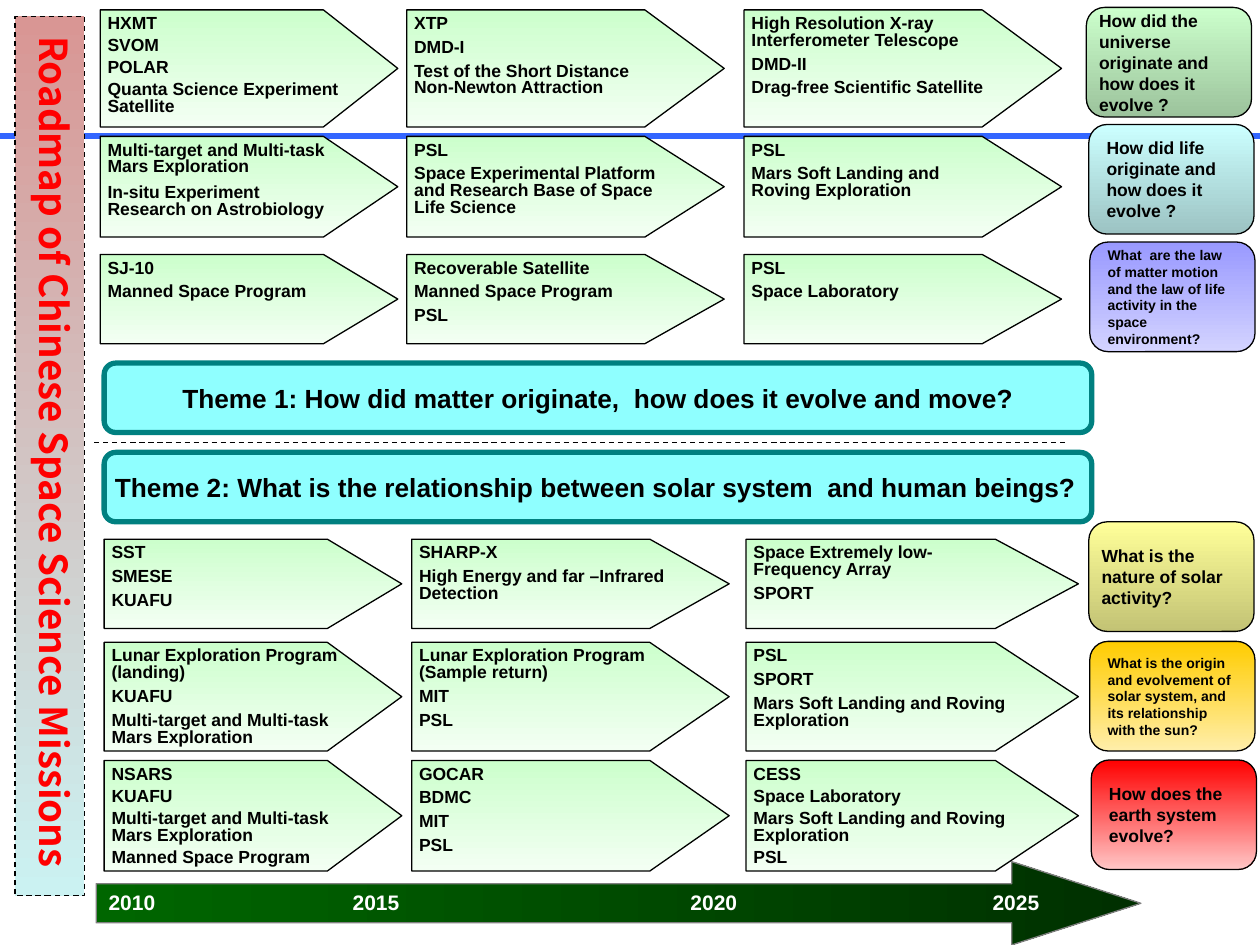
"""Build the roadmap slide of Chinese space science missions."""
from dataclasses import dataclass

from lxml.etree import SubElement
from pptx import Presentation
from pptx.dml.color import RGBColor
from pptx.enum.dml import MSO_LINE
from pptx.enum.shapes import MSO_CONNECTOR, MSO_SHAPE
from pptx.enum.text import MSO_ANCHOR, MSO_AUTO_SIZE, PP_ALIGN
from pptx.oxml.ns import qn
from pptx.util import Cm, Pt


@dataclass(frozen=True)
class Theme:
    """Colours, fonts and type sizes of the slide."""
    ink: str = "000000"
    white: str = "FFFFFF"
    title: str = "FF0000"
    title_fill: tuple = ("D99694", "CBF2F2")
    mission_fill: tuple = ("CCFFCC", "F3FFF3")
    universe_fill: tuple = ("CCFFCC", "9CC39C")
    life_fill: tuple = ("CCFFFF", "9CC3C3")
    matter_fill: tuple = ("9999FF", "D3D3FF")
    sun_fill: tuple = ("FFFF99", "C3C375")
    planets_fill: tuple = ("FFCC00", "FFEEAA")
    earth_fill: tuple = ("FF0000", "FFC6C6")
    timeline_fill: tuple = ("006600", "003000")
    timeline_line: str = "808080"
    banner_fill: tuple = ("8FFFFF",)
    banner_line: str = "008080"
    header_rule: str = "3366FF"
    font: str = "Arial"
    title_font: str = "Noto Sans CJK SC"
    title_size: int = 22
    banner_size: int = 15
    year_size: int = 12
    body_size: int = 10
    small_size: int = 8


theme = Theme()


def paint(shape, fill, line, width=0.75, angle=270):
    shape.shadow.inherit = False
    if len(fill) == 1:
        shape.fill.solid()
        shape.fill.fore_color.rgb = RGBColor.from_string(fill[0])
    else:
        shape.fill.gradient()
        shape.fill.gradient_angle = angle
        for stop, color in zip(shape.fill.gradient_stops, fill):
            stop.color.rgb = RGBColor.from_string(color)
    shape.line.color.rgb = RGBColor.from_string(line)
    shape.line.width = Pt(width)


def write(shape, lines, size, color=theme.ink, font=theme.font, gap=0,
          frame_format=None, para_format=None):
    frame = shape.text_frame
    frame_values = {"word_wrap": True, "auto_size": MSO_AUTO_SIZE.NONE,
                    "vertical_anchor": MSO_ANCHOR.MIDDLE, **(frame_format or {})}
    for name, value in frame_values.items():
        setattr(frame, name, value)
    for index, line in enumerate(lines):
        para = frame.add_paragraph() if index else frame.paragraphs[0]
        para_values = {"alignment": PP_ALIGN.LEFT, "space_before": Pt(gap if index else 0),
                       **(para_format or {})}
        for name, value in para_values.items():
            setattr(para, name, value)
        span = para.add_run()
        span.text = line
        for name, value in {"name": font, "size": Pt(size), "bold": True}.items():
            setattr(span.font, name, value)
        span.font.color.rgb = RGBColor.from_string(color)


deck = Presentation()
deck.slide_width, deck.slide_height = Cm(25.4), Cm(19.05)
page = deck.slides.add_slide(deck.slide_layouts[5])
shapes = page.shapes

title = shapes.title
title_box = {"left": 0.3, "top": 0.33, "width": 1.4, "height": 17.73}
for name, value in title_box.items():
    setattr(title, name, Cm(value))
paint(title, theme.title_fill, theme.ink)
title.line.dash_style = MSO_LINE.DASH
title_frame = {"vertical_anchor": MSO_ANCHOR.TOP, "margin_left": Cm(0.13),
               "margin_right": Cm(0.13), "margin_top": Cm(0.4)}
write(title, ["Roadmap of Chinese Space Science Missions"], theme.title_size,
      theme.title, theme.title_font, frame_format=title_frame,
      para_format={"alignment": PP_ALIGN.CENTER})
title.element.find(".//" + qn("a:bodyPr")).set("vert", "eaVert")

rules = []
for left, right, height, color, width in [(0, 25.4, 2.74, theme.header_rule, 3.5),
                                          (1.9, 21.5, 8.92, theme.ink, 0.75)]:
    rule = shapes.add_connector(MSO_CONNECTOR.STRAIGHT, Cm(left), Cm(height),
                                Cm(right), Cm(height))
    rule.line.color.rgb = RGBColor.from_string(color)
    rule.line.width = Pt(width)
    SubElement(rule.element.spPr, qn("a:effectLst"))
    rules.append(rule)
header_rule, theme_rule = rules
title.element.addprevious(header_rule.element)
theme_rule.line.dash_style = MSO_LINE.DASH

tight, normal, loose = 3, 4, 5
upper_columns = [(2.02, 6), (8.2, 6.4), (15, 6.4)]
lower_columns = [(2.1, 6), (8.3, 6.4), (15.04, 6.7)]
mission_rows = [
    (upper_columns, 0.2, 2.36, (tight, normal, normal), [
        ["HXMT", "SVOM", "POLAR", "Quanta Science Experiment Satellite"],
        ["XTP", "DMD-I", "Test of the Short Distance Non-Newton Attraction"],
        ["High Resolution X-ray Interferometer Telescope", "DMD-II",
         "Drag-free Scientific Satellite"]]),
    (upper_columns, 2.75, 2.03, (loose, normal, normal), [
        ["Multi-target and Multi-task Mars Exploration",
         "In-situ Experiment Research on Astrobiology"],
        ["PSL", "Space Experimental Platform and Research Base of Space Life Science"],
        ["PSL", "Mars Soft Landing and Roving Exploration"]]),
    (upper_columns, 5.13, 1.8, (normal, normal, normal), [
        ["SJ-10", "Manned Space Program"],
        ["Recoverable Satellite", "Manned Space Program", "PSL"],
        ["PSL", "Space Laboratory"]]),
    (lower_columns, 10.87, 1.8, (normal, normal, normal), [
        ["SST", "SMESE", "KUAFU"],
        ["SHARP-X", "High Energy and far –Infrared Detection"],
        ["Space Extremely low-Frequency Array", "SPORT"]]),
    (lower_columns, 12.95, 2.19, (normal, normal, normal), [
        ["Lunar Exploration Program (landing)", "KUAFU",
         "Multi-target and Multi-task Mars Exploration"],
        ["Lunar Exploration Program (Sample return)", "MIT", "PSL"],
        ["PSL", "SPORT", "Mars Soft Landing and Roving Exploration"]]),
    (lower_columns, 15.33, 2.23, (tight, normal, tight), [
        ["NSARS", "KUAFU", "Multi-target and Multi-task Mars Exploration",
         "Manned Space Program"],
        ["GOCAR", "BDMC", "MIT", "PSL"],
        ["CESS", "Space Laboratory", "Mars Soft Landing and Roving Exploration", "PSL"]]),
]
tip_share = 0.25
mission_frame = {"margin_left": Cm(0.15), "margin_right": Cm(0.43),
                 "vertical_anchor": MSO_ANCHOR.TOP}
for columns, top, height, gaps, cells in mission_rows:
    for (left, width), gap, missions in zip(columns, gaps, cells):
        arrow = shapes.add_shape(MSO_SHAPE.PENTAGON, Cm(left), Cm(top), Cm(width), Cm(height))
        arrow.adjustments[0] = tip_share * width / height
        paint(arrow, theme.mission_fill, theme.ink)
        write(arrow, missions, theme.body_size, gap=gap, frame_format=mission_frame,
              para_format={"line_spacing": 0.8})

timeline = shapes.add_shape(MSO_SHAPE.RIGHT_ARROW, Cm(1.94), Cm(17.37), Cm(21.06), Cm(1.68))
timeline.adjustments[0], timeline.adjustments[1] = 0.47, 1.55
paint(timeline, theme.timeline_fill, theme.timeline_line, angle=0)
years = ["2010", "2015", "2020", "2025"]
year_tabs = [4.92, 11.73, 17.82]
write(timeline, ["\t".join(years)], theme.year_size, theme.white,
      frame_format={"vertical_anchor": MSO_ANCHOR.TOP})
year_properties = timeline.element.find(".//" + qn("a:pPr"))
tab_list = SubElement(year_properties, qn("a:tabLst"))
for position in year_tabs:
    SubElement(tab_list, qn("a:tab"), pos=str(Cm(position)), algn="l")

narrow, wide = 0.15, 0.25
questions = [
    (21.9, 0.15, narrow, theme.body_size, theme.universe_fill,
     "How did the universe originate and how does it evolve ?"),
    (21.95, 2.51, wide, theme.body_size, theme.life_fill,
     "How did life originate and how does it evolve ?"),
    (21.97, 4.88, wide, theme.small_size, theme.matter_fill,
     "What  are the law of matter motion and the law of life activity in the space environment?"),
    (21.95, 10.52, narrow, theme.body_size, theme.sun_fill,
     "What is the nature of solar activity?"),
    (21.97, 12.93, wide, theme.small_size, theme.planets_fill,
     "What is the origin and evolvement of solar system, and its relationship with the sun?"),
    (22, 15.32, wide, theme.body_size, theme.earth_fill,
     "How does the earth system evolve?"),
]
for left, top, margin, size, fill, question in questions:
    box = shapes.add_shape(MSO_SHAPE.ROUNDED_RECTANGLE, Cm(left), Cm(top), Cm(3.33), Cm(2.21))
    paint(box, fill, theme.ink)
    write(box, [question], size,
          frame_format={"margin_left": Cm(margin), "margin_right": Cm(margin)})

banners = [
    (7.32, PP_ALIGN.CENTER, 0,
     "Theme 1: How did matter originate,  how does it evolve and move?"),
    (9.12, PP_ALIGN.LEFT, 0.15,
     "Theme 2: What is the relationship between solar system  and human beings?"),
]
for top, alignment, margin, text in banners:
    banner = shapes.add_shape(MSO_SHAPE.ROUNDED_RECTANGLE, Cm(2.1), Cm(top), Cm(19.91), Cm(1.4))
    paint(banner, theme.banner_fill, theme.banner_line, 3)
    write(banner, [text], theme.banner_size, para_format={"alignment": alignment},
          frame_format={"margin_left": Cm(margin), "margin_right": Cm(0)})

deck.save("out.pptx")
